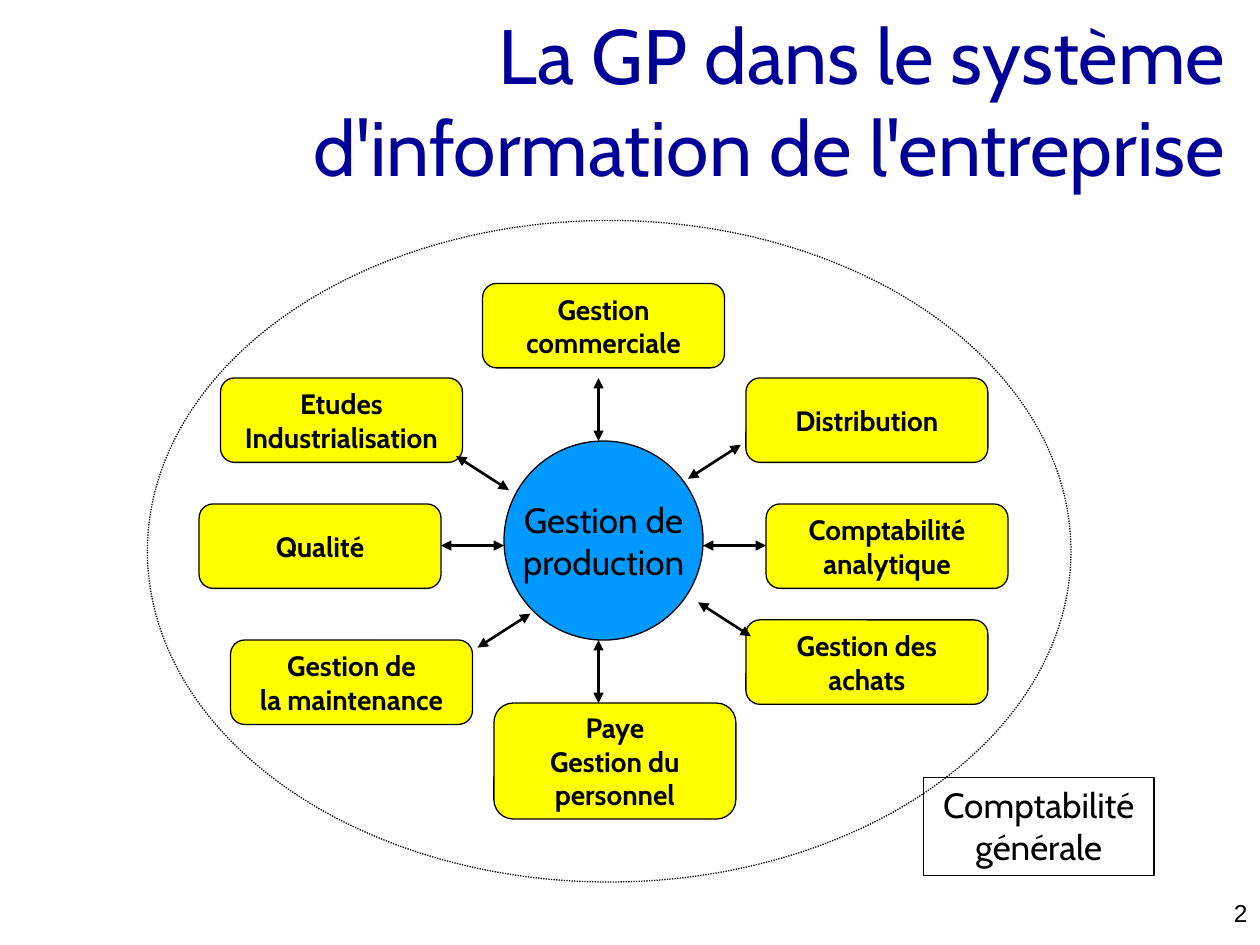
from lxml import etree
from pptx import Presentation
from pptx.dml.color import RGBColor
from pptx.enum.dml import MSO_LINE
from pptx.enum.shapes import MSO_CONNECTOR, MSO_SHAPE
from pptx.enum.text import MSO_ANCHOR, MSO_AUTO_SIZE, PP_ALIGN
from pptx.oxml.ns import qn
from pptx.util import Inches, Pt

ROUNDED, OVAL, RECT = MSO_SHAPE.ROUNDED_RECTANGLE, MSO_SHAPE.OVAL, MSO_SHAPE.RECTANGLE
STRAIGHT = MSO_CONNECTOR.STRAIGHT
DOTTED = MSO_LINE.ROUND_DOT
TOP, MIDDLE = MSO_ANCHOR.TOP, MSO_ANCHOR.MIDDLE
CENTER, RIGHT = PP_ALIGN.CENTER, PP_ALIGN.RIGHT
NO_FIT = MSO_AUTO_SIZE.NONE


def rgb(value):
    return RGBColor.from_string(value)


class Deck:
    font, ink, navy, yellow, blue = "Cabin", "000000", "000099", "FFFF00", "0099FF"

    def __init__(self, width, height):
        self.prs = Presentation()
        self.prs.slide_width, self.prs.slide_height = Inches(width), Inches(height)
        self.s = self.prs.slides.add_slide(self.prs.slide_layouts[5])

    def add_text(self, sp, paragraphs, size, align=CENTER, anchor=MIDDLE, wrap=False,
                 color=ink, font=font, bold=False):
        tf = sp.text_frame
        frame_format = {"auto_size": NO_FIT, "word_wrap": wrap, "vertical_anchor": anchor}
        for name, value in frame_format.items():
            setattr(tf, name, value)
        run_format = {"size": Pt(size), "name": font, "bold": bold}
        for i, text in enumerate(paragraphs):
            p = tf.add_paragraph() if i else tf.paragraphs[0]
            p.text, p.alignment = text, align
            for r in p.runs:
                for name, value in run_format.items():
                    setattr(r.font, name, value)
                r.font.color.rgb = rgb(color)

    def title(self, text, x, y, w, h):
        sp = self.s.shapes.title
        place = {"left": x, "top": y, "width": w, "height": h}
        for name, value in place.items():
            setattr(sp, name, Inches(value))
        self.add_text(sp, [text], 44, RIGHT, wrap=True, color=self.navy)

    def label(self, text, x, y, w, h, size, **style):
        sp = self.s.shapes.add_textbox(*map(Inches, (x, y, w, h)))
        self.add_text(sp, [text], size, **style)

    def shape(self, kind, x, y, w, h, fill=None, dash=None):
        sp = self.s.shapes.add_shape(kind, *map(Inches, (x, y, w, h)))
        sp.shadow.inherit = False
        if fill:
            sp.fill.solid()
            sp.fill.fore_color.rgb = rgb(fill)
        else:
            sp.fill.background()
        sp.line.color.rgb, sp.line.width = rgb(self.ink), Pt(0.75)
        if dash:
            sp.line.dash_style = dash
        return sp

    def module(self, text, x, y, h=0.67):
        sp = self.shape(ROUNDED, x, y, 1.92, h, self.yellow)
        self.add_text(sp, [text], 16, bold=True)

    def double_arrow(self, x1, y1, x2, y2):
        cx = self.s.shapes.add_connector(STRAIGHT, *map(Inches, (x1, y1, x2, y2)))
        cx.line.color.rgb, cx.line.width = rgb(self.ink), Pt(1.5)
        ln = cx.line._get_or_add_ln()
        for end in ("a:headEnd", "a:tailEnd"):
            etree.SubElement(ln, qn(end), type="triangle")
        etree.SubElement(cx._element.spPr, qn("a:effectLst"))


def main():
    d = Deck(10, 7.5)

    # Title and page number
    d.title("La GP dans le système d'information de l'entreprise", 0.25, 0.33, 9.58, 0.92)
    d.label("2", 7.92, 7.08, 2.08, 0.25, 14, align=RIGHT, anchor=TOP, wrap=True, font="Arial")

    # Modules around the core
    for module in (
        ("Etudes\nIndustrialisation", 1.75, 3),
        ("Gestion\ncommerciale", 3.83, 2.25),
        ("Distribution", 5.92, 3),
        ("Qualité", 1.58, 4),
        ("Comptabilité\nanalytique", 6.08, 4),
        ("Gestion de\nla maintenance", 1.83, 5.08),
        ("Gestion des\nachats", 5.92, 4.92),
        ("Paye\nGestion du\npersonnel", 3.92, 5.58, 0.92),
    ):
        d.module(*module)

    # Core
    core = d.shape(OVAL, 4, 3.5, 1.58, 1.58, d.blue)
    d.add_text(core, ["Gestion de", "production"], 20)

    # Exchanges between the core and the modules
    for ends in (
        (4.75, 5.08, 4.75, 5.58),
        (4.75, 3, 4.75, 3.5),
        (5.58, 4.33, 6.08, 4.33),
        (3.5, 4.33, 4, 4.33),
        (3.62, 3.62, 4.04, 3.89),
        (5.54, 4.78, 5.96, 5.05),
        (5.88, 3.53, 5.46, 3.8),
        (4.21, 4.87, 3.79, 5.14),
    ):
        d.double_arrow(*ends)

    # System boundary and general accounting
    d.shape(OVAL, 1.17, 1.75, 7.33, 5.25, dash=DOTTED)
    accounting = d.shape(RECT, 7.33, 6.17, 1.83, 0.78)
    d.add_text(accounting, ["Comptabilité\ngénérale"], 20, anchor=TOP, wrap=True)

    d.prs.save("out.pptx")


if __name__ == "__main__":
    main()
